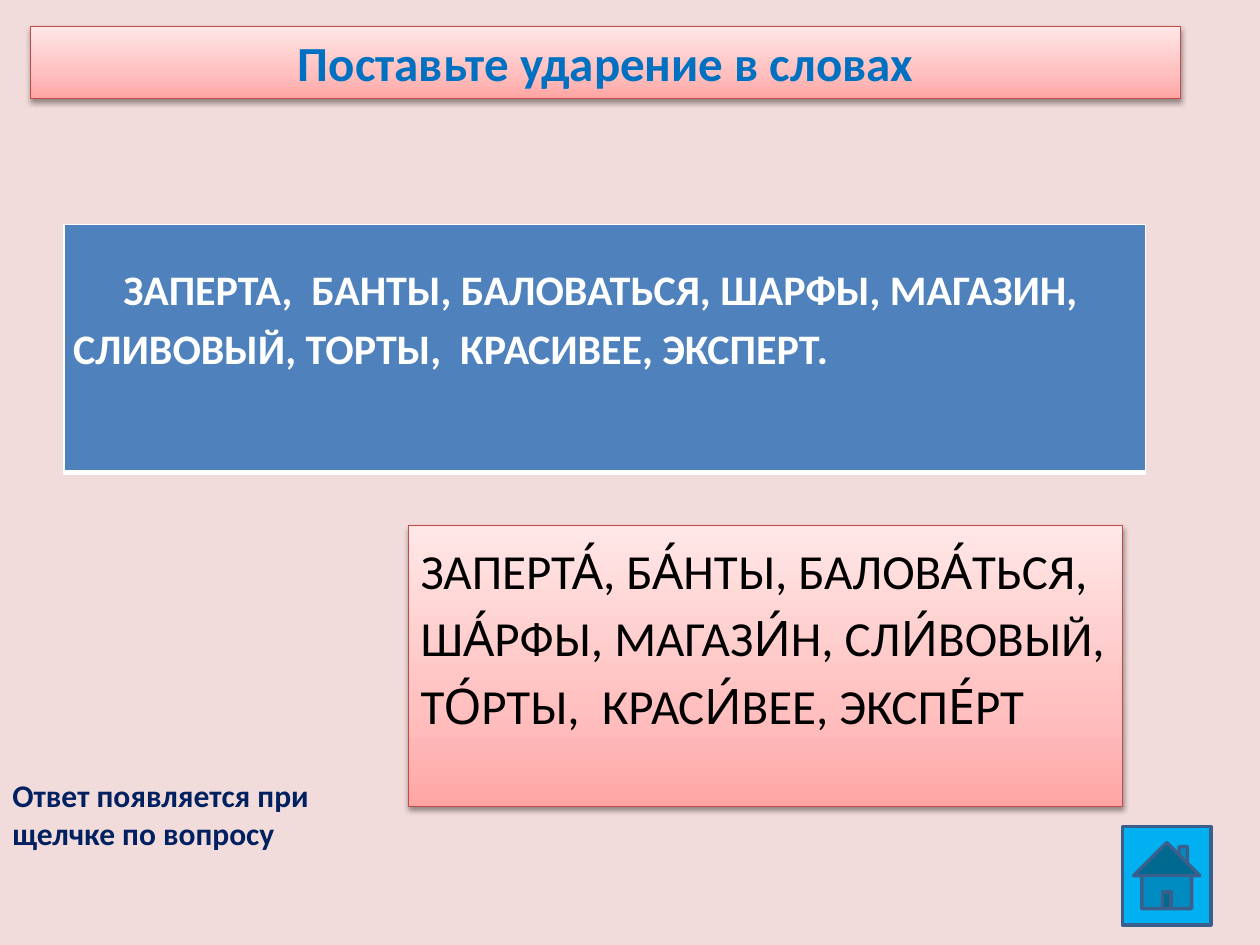
from copy import deepcopy

from lxml import etree
from pptx import Presentation
from pptx.dml.color import RGBColor
from pptx.enum import shapes, text
from pptx.oxml import ns
from pptx.util import Inches, Pt

BACKGROUND = RGBColor(0xF2, 0xDC, 0xDB)
PANEL_STOPS = (
    (0, RGBColor(0xFF, 0xA6, 0xA5)),
    (0.35, RGBColor(0xFF, 0xC0, 0xBF)),
    (1, RGBColor(0xFF, 0xE7, 0xE7)),
)
PANEL_LINE = RGBColor(0xBF, 0x4C, 0x48)
TITLE_BLUE = RGBColor(0x00, 0x70, 0xC0)
NAVY = RGBColor(0x00, 0x20, 0x60)
TABLE_BLUE = RGBColor(0x4F, 0x81, 0xBD)
BUTTON_BLUE = RGBColor(0x00, 0xB0, 0xF0)
BUTTON_LINE = RGBColor(0x3A, 0x5F, 0x8C)
BLACK = RGBColor(0, 0, 0)
WHITE = RGBColor(0xFF, 0xFF, 0xFF)

TITLE = "Поставьте ударение в словах"
QUESTION = (
    "ЗАПЕРТА,  БАНТЫ, БАЛОВАТЬСЯ, ШАРФЫ, МАГАЗИН, "
    "СЛИВОВЫЙ, ТОРТЫ,  КРАСИВЕЕ, ЭКСПЕРТ."
)
ANSWER = (
    "ЗАПЕРТА́, БА́НТЫ, БАЛОВА́ТЬСЯ, ША́РФЫ, МАГАЗИ́Н, "
    "СЛИ́ВОВЫЙ, ТО́РТЫ,  КРАСИ́ВЕЕ, ЭКСПЕ́РТ"
)
HINT = "Ответ появляется при щелчке по вопросу"


def inches(*lengths):
    """Convert several lengths to Inches."""
    return [Inches(length) for length in lengths]


def write(frame, words, size, color, bold=False, align=text.PP_ALIGN.LEFT, spacing=1):
    """Put one formatted paragraph in a text frame and return it."""
    frame.text = words
    frame.word_wrap = True
    para = frame.paragraphs[0]
    para.alignment = align
    para.line_spacing = spacing
    font = para.runs[0].font
    font.name, font.size, font.bold = "Calibri", Pt(size), bold
    font.color.rgb = color
    return para


def style_panel(box):
    """Give a box the pink gradient, red outline and soft shadow."""
    box.fill.gradient()
    box.fill.gradient_angle = 90
    stop_list = box._element.spPr.find(".//" + ns.qn("a:gsLst"))
    stop_list.insert(1, deepcopy(stop_list[0]))
    for stop, (position, color) in zip(box.fill.gradient_stops, PANEL_STOPS):
        stop.position = position
        stop.color.rgb = color
    box.line.color.rgb = PANEL_LINE
    box.line.width = Pt(0.75)
    box.shadow.inherit = False
    effects = box._element.spPr.find(ns.qn("a:effectLst"))
    shadow = etree.SubElement(
        effects, ns.qn("a:outerShdw"), blurRad=str(Pt(3.1)), dist=str(Pt(1.6)),
        dir="5400000", rotWithShape="0",
    )
    color = etree.SubElement(shadow, ns.qn("a:srgbClr"), val="000000")
    etree.SubElement(color, ns.qn("a:alpha"), val="38000")


def add_title(page):
    """Place the title banner."""
    title = page.shapes.title
    title.left, title.top, title.width, title.height = inches(0.24, 0.21, 9.13, 0.57)
    style_panel(title)
    write(title.text_frame, TITLE, 28, TITLE_BLUE, True, text.PP_ALIGN.CENTER)
    title.text_frame.vertical_anchor = text.MSO_ANCHOR.MIDDLE


def add_hint(page):
    """Add the hint in the lower left corner."""
    box = page.shapes.add_textbox(*inches(0, 6.11, 2.76, 0.71))
    write(box.text_frame, HINT, 18, NAVY, True)


def add_answer(page):
    """Add the panel with the stressed words."""
    box = page.shapes.add_shape(
        shapes.MSO_SHAPE.RECTANGLE, *inches(3.24, 4.17, 5.67, 2.23)
    )
    style_panel(box)
    write(box.text_frame, ANSWER, 28, BLACK, spacing=1.15)
    box.text_frame.vertical_anchor = text.MSO_ANCHOR.TOP


def set_borders(cell, widths):
    """Draw white cell borders ahead of the cell fill."""
    properties = cell._tc.get_or_add_tcPr()
    for index, (side, width) in enumerate(widths.items()):
        line = etree.Element(ns.qn("a:ln" + side), w=str(Pt(width)))
        fill = etree.SubElement(line, ns.qn("a:solidFill"))
        etree.SubElement(fill, ns.qn("a:srgbClr"), val=str(WHITE))
        properties.insert(index, line)


def add_question(page):
    """Add the one-cell table with the words to stress."""
    frame = page.shapes.add_table(1, 1, *inches(0.51, 1.78, 8.58, 1.97))
    cell = frame.table.cell(0, 0)
    cell.fill.solid()
    cell.fill.fore_color.rgb = TABLE_BLUE
    cell.margin_left = cell.margin_right = Inches(0.07)
    cell.margin_top, cell.margin_bottom = inches(0.27, 0)
    para = write(cell.text_frame, QUESTION, 24, WHITE, True, spacing=1.15)
    para._p.get_or_add_pPr().set("indent", str(Inches(0.4)))
    set_borders(cell, {"L": 1, "R": 1, "T": 1, "B": 3})


def add_home_button(page):
    """Add the home button."""
    button = page.shapes.add_shape(
        shapes.MSO_SHAPE.ACTION_BUTTON_HOME, *inches(8.91, 6.56, 0.7, 0.78)
    )
    button.shadow.inherit = False
    button.fill.solid()
    button.fill.fore_color.rgb = BUTTON_BLUE
    button.line.color.rgb = BUTTON_LINE
    button.line.width = Pt(2)


def main():
    """Build the slide and save the deck."""
    deck = Presentation()
    deck.slide_width, deck.slide_height = inches(10, 7.5)
    page = deck.slides.add_slide(deck.slide_layouts[5])
    page.background.fill.solid()
    page.background.fill.fore_color.rgb = BACKGROUND
    add_home_button(page)
    add_title(page)
    add_hint(page)
    add_answer(page)
    add_question(page)
    deck.save("out.pptx")


if __name__ == "__main__":
    main()
